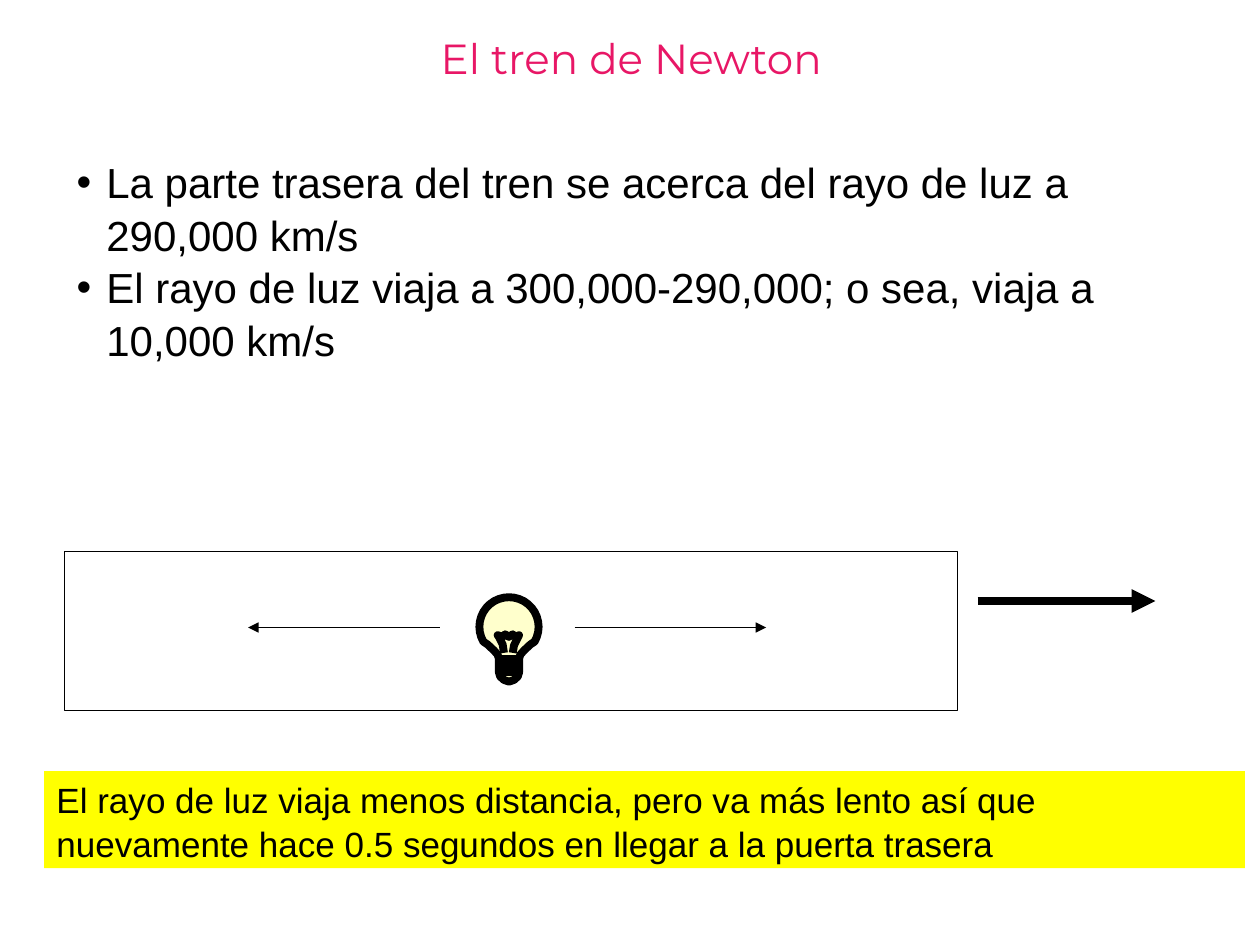
from math import cos, radians, sin
from typing import NamedTuple

from lxml.etree import SubElement
from pptx import Presentation
from pptx.dml.color import RGBColor
from pptx.enum.shapes import MSO_CONNECTOR, MSO_SHAPE
from pptx.enum.text import MSO_ANCHOR, PP_ALIGN
from pptx.oxml.ns import qn
from pptx.util import Inches, Pt

COLORS = {"ink": "000000", "title": "E81766", "glass": "FFFFCC", "note": "FFFF00"}
COLUMNS, ROWS = 100, 75
CELL = Inches(0.1)


class Box(NamedTuple):
    """Left, top, width and height in grid cells."""
    left: float
    top: float
    width: float
    height: float

    def lengths(self):
        return [cells(value) for value in self]


def cells(count):
    return int(count * CELL)


def color(name):
    return RGBColor.from_string(COLORS[name])


def write_text(shape, paragraphs, size, font="Arial", ink="ink", align=PP_ALIGN.LEFT,
               spacing=None, bullet=None, wrap=True):
    frame = shape.text_frame
    frame.word_wrap = wrap
    frame.vertical_anchor = MSO_ANCHOR.TOP
    frame.text = "\n".join(paragraphs)
    for paragraph in frame.paragraphs:
        paragraph.alignment = align
        if spacing:
            paragraph.line_spacing = spacing
        paragraph.font.size = Pt(size)
        paragraph.font.name = font
        paragraph.font.color.rgb = color(ink)
        if bullet:
            add_bullet(paragraph, bullet)


def add_bullet(paragraph, character):
    properties = paragraph._p.get_or_add_pPr()
    indent = cells(2.36)
    properties.set("marL", str(indent))
    properties.set("indent", str(-indent))
    SubElement(properties, qn("a:buFont"), typeface="Arial")
    SubElement(properties, qn("a:buChar"), char=character)


def style_shape(shape, fill=None, line_width=None):
    shape.shadow.inherit = False
    if fill:
        shape.fill.solid()
        shape.fill.fore_color.rgb = color(fill)
    else:
        shape.fill.background()
    if line_width:
        shape.line.color.rgb = color("ink")
        shape.line.width = Pt(line_width)
    else:
        shape.line.fill.background()


def add_arrow(shapes, start, end, row, width):
    arrow = shapes.add_connector(
        MSO_CONNECTOR.STRAIGHT, cells(start), cells(row), cells(end), cells(row))
    arrow.line.color.rgb = color("ink")
    arrow.line.width = Pt(width)
    SubElement(arrow.line._get_or_add_ln(), qn("a:tailEnd"), type="triangle")
    SubElement(arrow._element.spPr, qn("a:effectLst"))


def add_title(shapes, box):
    title = shapes.add_textbox(*box.lengths())
    write_text(title, ["El tren de Newton"], 24, font="Montserrat", ink="title",
               align=PP_ALIGN.CENTER, wrap=False)


def add_points(shapes, box):
    points = shapes.add_textbox(*box.lengths())
    write_text(points, [
        "La parte trasera del tren se acerca del rayo de luz a 290,000 km/s",
        "El rayo de luz viaja a 300,000-290,000; o sea, viaja a 10,000 km/s",
    ], 24, spacing=1.04, bullet="•")


def add_bulb(shapes, box):
    center = box.left + box.width / 2
    radius = box.width / 2

    def draw(contours, closed, fill):
        builder = None
        for contour in contours:
            points = [(cells(center + x), cells(box.top + y * box.height))
                      for x, y in contour]
            if builder is None:
                builder = shapes.build_freeform(*points[0])
            else:
                builder.move_to(*points[0])
            builder.add_line_segments(points[1:], close=closed)
        style_shape(builder.convert_to_shape(), fill, 4.5)

    # Glass: a round head, then the neck, mirrored about the centre
    head = [(radius * cos(radians(angle)),
             radius * (1 + sin(radians(angle))) / box.height)
            for angle in range(-90, 31, 10)]
    neck = [(1.7, 0.56), (1.2, 0.63), (0.9, 0.68), (0.8, 0.73), (0.8, 0.89),
            (0.7, 0.94), (0.4, 0.98), (0, 1)]
    half = head + neck
    mirrored = [(-x, y) for x, y in reversed(half[1:-1])]
    draw([half + mirrored], True, "glass")

    # Filament and screw thread
    filament = [(-0.4, 0.66), (-0.5, 0.56), (-0.8, 0.47), (-0.9, 0.45), (-0.5, 0.47),
                (-0.3, 0.44), (0, 0.47), (0.3, 0.44), (0.5, 0.47), (0.8, 0.45),
                (0.4, 0.57), (0.3, 0.66)]
    thread = [(-0.8, 0.73), (0.8, 0.73), (0.8, 0.78), (-0.8, 0.78),
              (-0.8, 0.84), (0.8, 0.84), (0.8, 0.89), (-0.8, 0.89)]
    draw([filament, thread], False, None)


def add_train(shapes, box):
    group = shapes.add_group_shape().shapes
    wagon = group.add_shape(MSO_SHAPE.RECTANGLE, *box.lengths())
    style_shape(wagon, line_width=0.75)
    bulb = Box(box.left + 32.95, box.top + 3.6, 4.7, 6.7)
    add_bulb(group, bulb)

    # Light rays to both ends
    middle = box.left + 35.15
    for side in (1, -1):
        add_arrow(group, middle + side * 5.35, middle + side * 20.55, box.top + 6, 0.75)

    # Direction of travel
    right = box.left + box.width
    add_arrow(shapes, right + 1.6, right + 15.7, box.top + 3.9, 4.5)


def add_note(shapes, box):
    note = shapes.add_shape(MSO_SHAPE.RECTANGLE, *box.lengths())
    style_shape(note, fill="note")
    write_text(note, ["El rayo de luz viaja menos distancia, pero va más lento así que "
                      "nuevamente hace 0.5 segundos en llegar a la puerta trasera"],
               20, spacing=1.04)


def main():
    presentation = Presentation()
    presentation.slide_width = cells(COLUMNS)
    presentation.slide_height = cells(ROWS)
    slide = presentation.slides.add_slide(presentation.slide_layouts[6])
    add_points(slide.shapes, Box(5.1, 11.8, 86.9, 17.2))
    add_train(slide.shapes, Box(5.1, 43.8, 70.9, 12.6))
    add_note(slide.shapes, Box(3.5, 61.2, 95.3, 7.7))
    add_title(slide.shapes, Box(4.6, 2.1, 91, 5.7))
    presentation.save("out.pptx")


if __name__ == "__main__":
    main()
